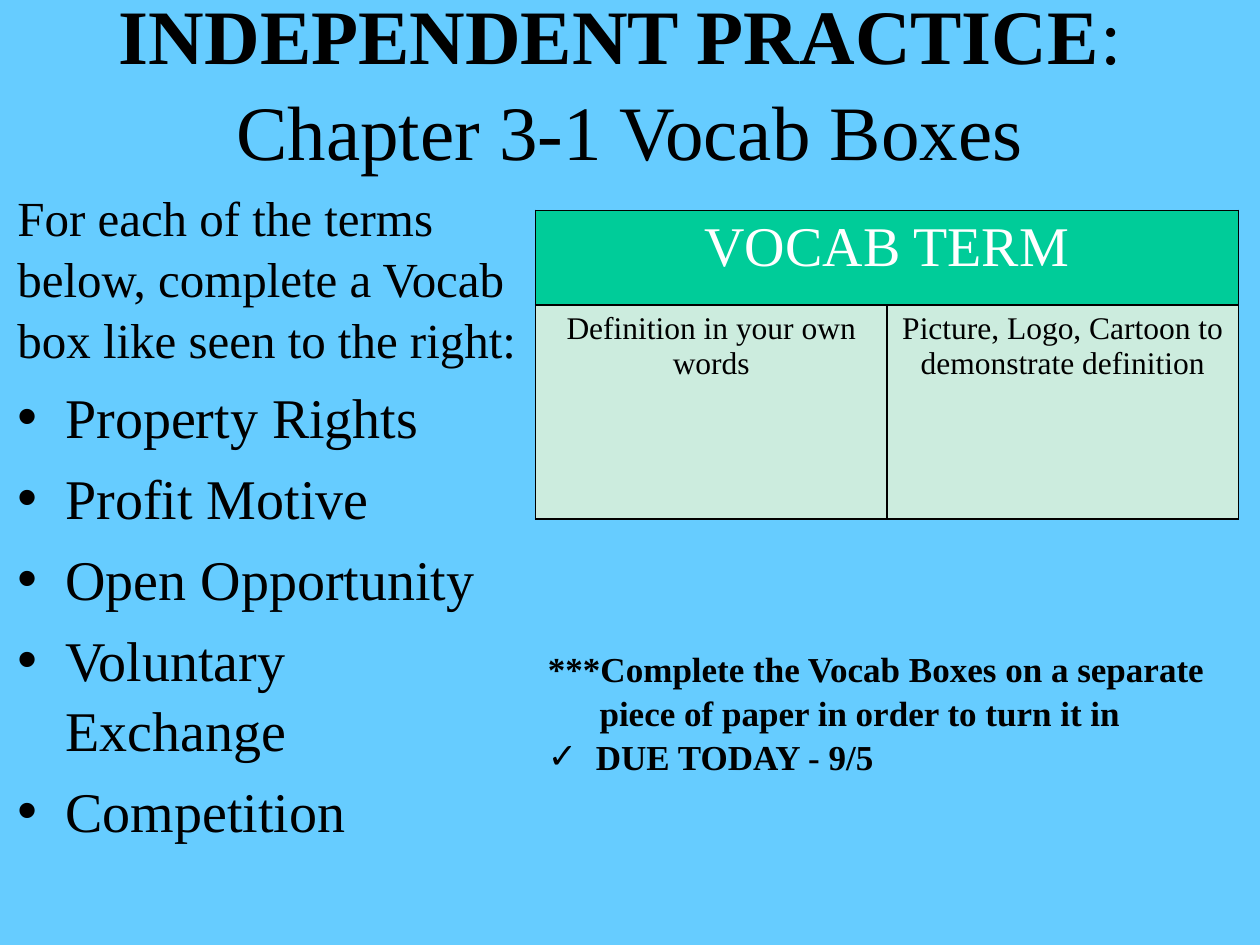
from lxml.etree import SubElement
from pptx import Presentation
from pptx.dml.color import RGBColor as Color
from pptx.enum.text import MSO_ANCHOR as Anchor, MSO_AUTO_SIZE as AutoSize, PP_ALIGN as Align
from pptx.oxml.ns import qn
from pptx.util import Inches, Pt

COLORS = {"sky": "66CCFF", "black": "000000", "white": "FFFFFF",
          "green": "00CC99", "mint": "CCECDE"}
FONT = "Times New Roman"


def write(para, text, size=20, bold=False, color="black", align=None,
          bullet=None, left=0, hanging=0, before=0, spacing=None):
    """Add a formatted run to a paragraph."""
    if left:
        props = para._p.get_or_add_pPr()
        props.set("marL", str(Inches(left)))
        props.set("indent", str(-Inches(hanging)))
    if bullet:
        SubElement(props, qn("a:buFont"), typeface="Arial")
        SubElement(props, qn("a:buChar"), char=bullet)
    if align is not None:
        para.alignment = align
    if before:
        para.space_before = Pt(before)
    if spacing:
        para.line_spacing = spacing
    span = para.add_run()
    span.text = text
    span.font.name = FONT
    span.font.size = Pt(size)
    span.font.bold = bold
    span.font.color.rgb = Color.from_string(COLORS[color])


deck = Presentation()
deck.slide_width, deck.slide_height = Inches(10), Inches(7.5)
page = deck.slides.add_slide(deck.slide_layouts[5])
page.background.fill.solid()
page.background.fill.fore_color.rgb = Color.from_string(COLORS["sky"])

# Title
title = page.shapes.title
title.left, title.top = Inches(0.75), Inches(0.01)
title.width, title.height = Inches(8.5), Inches(1.25)
frame = title.text_frame
frame.word_wrap = True
frame.auto_size = AutoSize.NONE
frame.vertical_anchor = Anchor.MIDDLE
heading = frame.paragraphs[0]
heading_format = {"size": 44, "align": Align.CENTER, "spacing": 1.04}
write(heading, "INDEPENDENT PRACTICE", bold=True, **heading_format)
write(heading, ": ", **heading_format)
heading.add_line_break()
write(heading, "Chapter 3-1 Vocab Boxes", **heading_format)

# Instructions with the terms, and the reminder under the table
term_format = {"size": 32, "bullet": "•", "left": 0.38, "hanging": 0.38, "before": 6.4}
terms = ["Property Rights", "Profit Motive", "Open Opportunity",
         "Voluntary Exchange", "Competition"]
instructions = [("For each of the terms below, complete a Vocab box like seen to the right:",
                 {"size": 28})] + [(term, term_format) for term in terms]
reminder = [
    ("***Complete the Vocab Boxes on a separate", {"bold": True}),
    ("piece of paper in order to turn it in", {"bold": True, "left": 0.41}),
    ("DUE TODAY - 9/5", {"bold": True, "bullet": "✓", "left": 0.38, "hanging": 0.38}),
]
for area, lines in [((0.04, 1.42, 4.17, 4.5), instructions),
                    ((4.25, 5.08, 5.58, 1.11), reminder)]:
    box = page.shapes.add_textbox(*[Inches(length) for length in area])
    frame = box.text_frame
    frame.word_wrap = True
    for index, (text, style) in enumerate(lines):
        para = frame.add_paragraph() if index else frame.paragraphs[0]
        write(para, text, spacing=1.04, **style)

# Vocab box table
table = page.shapes.add_table(2, 2, Inches(4.25), Inches(1.67),
                              Inches(5.58), Inches(2.45)).table
table.rows[0].height, table.rows[1].height = Inches(0.75), Inches(1.7)
table.cell(0, 0).merge(table.cell(0, 1))
cells = [
    (0, 0, "VOCAB TERM", 32, "white", "green"),
    (0, 1, None, 32, "white", "green"),
    (1, 0, "Definition in your own words", 18, "black", "mint"),
    (1, 1, "Picture, Logo, Cartoon to demonstrate definition", 18, "black", "mint"),
]
for row, column, text, size, color, fill in cells:
    cell = table.cell(row, column)
    if text:
        write(cell.text_frame.paragraphs[0], text, size=size, color=color,
              align=Align.CENTER)
    # Borders come before the fill in the cell properties
    props = cell._tc.get_or_add_tcPr()
    for side in ("lnL", "lnR", "lnT", "lnB"):
        line = SubElement(props, qn(f"a:{side}"), w=str(Pt(1)))
        SubElement(SubElement(line, qn("a:solidFill")), qn("a:srgbClr"),
                   val=COLORS["black"])
    cell.fill.solid()
    cell.fill.fore_color.rgb = Color.from_string(COLORS[fill])

deck.save("out.pptx")
